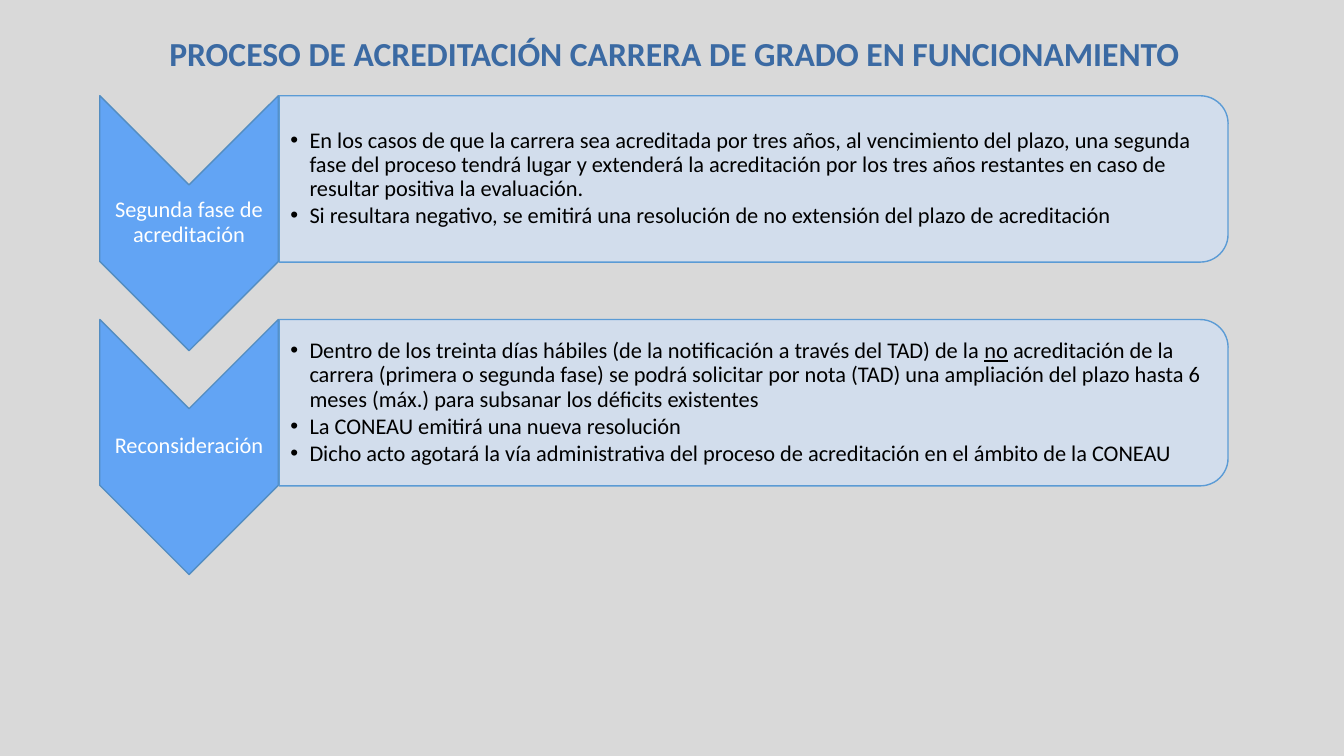
from dataclasses import dataclass

from lxml import etree
from pptx import Presentation
from pptx.dml.color import RGBColor
from pptx.enum.shapes import MSO_SHAPE
from pptx.enum.text import MSO_ANCHOR, MSO_AUTO_SIZE, PP_ALIGN
from pptx.oxml.ns import qn
from pptx.util import Inches, Pt

CHEVRON = MSO_SHAPE.CHEVRON
PANEL = MSO_SHAPE.ROUND_2_SAME_RECTANGLE
MIDDLE, BOTTOM = MSO_ANCHOR.MIDDLE, MSO_ANCHOR.BOTTOM
CENTER, LEFT = PP_ALIGN.CENTER, PP_ALIGN.LEFT
NO_FIT = MSO_AUTO_SIZE.NONE

COLORS = {
    "back": "D9D9D9",
    "title": "3B6AA3",
    "arrow": "62A4F4",
    "edge": "538DC1",
    "panel": "D2DEEF",
    "rim": "5B9BD5",
    "white": "FFFFFF",
    "black": "000000",
}
FONT = "Calibri"
FIRST_TOP = 0.95
PITCH = 2.22
INDENT = 0.19


@dataclass
class Box:
    left: float
    top: float
    width: float
    height: float

    def place(self) -> tuple:
        return tuple(Inches(v) for v in (self.left, self.top, self.width, self.height))


@dataclass
class Step:
    label: str
    points: list[list[str]]


STEPS = [
    Step("Segunda fase de acreditación", [
        ["En los casos de que la carrera sea acreditada por tres años, al vencimiento "
         "del plazo, una segunda fase del proceso tendrá lugar y extenderá la "
         "acreditación por los tres años restantes en caso de resultar positiva la "
         "evaluación."],
        ["Si resultara negativo, se emitirá una resolución de no extensión del plazo "
         "de acreditación"],
    ]),
    Step("Reconsideración", [
        ["Dentro de los treinta días hábiles (de la notificación a través del TAD) de la ",
         "no",
         " acreditación de la carrera (primera o segunda fase) se podrá solicitar por "
         "nota (TAD) una ampliación del plazo hasta 6 meses (máx.) para subsanar los "
         "déficits existentes"],
        ["La CONEAU emitirá una nueva resolución"],
        ["Dicho acto agotará la vía administrativa del proceso de acreditación en el "
         "ámbito de la CONEAU"],
    ]),
]


def rgb(name: str) -> RGBColor:
    return RGBColor.from_string(COLORS[name])


def add_bullet(para) -> None:
    props = para._p.get_or_add_pPr()
    props.set("marL", str(Inches(INDENT)))
    props.set("indent", str(-Inches(INDENT)))
    etree.SubElement(props, qn("a:buFont")).set("typeface", "Arial")
    etree.SubElement(props, qn("a:buChar")).set("char", "•")


def write(shape, paras: list[list[str]], *, color: str, size: int = 16,
          bold: bool = False, align=LEFT, anchor=MIDDLE, spacing=0.9,
          before: int = 0, after: int = 0, bullet: bool = False,
          inset: float = 0.01, indent: float = 0.01) -> None:
    frame = shape.text_frame
    frame.word_wrap = True
    frame.auto_size = NO_FIT
    frame.vertical_anchor = anchor
    frame.margin_left = Inches(indent)
    frame.margin_top = frame.margin_right = frame.margin_bottom = Inches(inset)
    for i, parts in enumerate(paras):
        para = frame.add_paragraph() if i else frame.paragraphs[0]
        para.alignment = align
        para.line_spacing = spacing
        para.space_before, para.space_after = Pt(before), Pt(after)
        if bullet:
            add_bullet(para)
        for j, part in enumerate(parts):
            run = para.add_run()
            run.text = part
            font = run.font
            font.name, font.size, font.bold = FONT, Pt(size), bold
            font.color.rgb = rgb(color)
            if j % 2:
                font.underline = True


def add_turned(slide, kind, box: Box, fill: str, line: str, alpha: int = 100) -> None:
    mid_x, mid_y = box.left + box.width / 2, box.top + box.height / 2
    turned = Box(mid_x - box.height / 2, mid_y - box.width / 2, box.height, box.width)
    shape = slide.shapes.add_shape(kind, *turned.place())
    shape.rotation = 90
    shape.shadow.inherit = False
    shape.fill.solid()
    shape.fill.fore_color.rgb = rgb(fill)
    shape.line.color.rgb = rgb(line)
    shape.line.width = Pt(1)
    if alpha < 100:
        tint = shape._element.spPr.find(qn("a:solidFill"))[0]
        etree.SubElement(tint, qn("a:alpha")).set("val", str(alpha * 1000))


def add_step(slide, step: Step, top: float) -> None:
    add_turned(slide, CHEVRON, Box(0.99, top, 1.77, 2.53), "arrow", "edge")
    label = slide.shapes.add_textbox(*Box(0.99, top + 0.88, 1.77, 0.76).place())
    write(label, [[step.label]], color="white", align=CENTER)
    add_turned(slide, PANEL, Box(2.77, top, 9.41, 1.65), "panel", "rim", 90)
    body = slide.shapes.add_textbox(*Box(2.76, top + 0.08, 9.33, 1.49).place())
    write(body, step.points, color="black", after=2, bullet=True, indent=0.12)


def main() -> None:
    deck = Presentation()
    deck.slide_width, deck.slide_height = Inches(13.33), Inches(7.5)
    slide = deck.slides.add_slide(deck.slide_layouts[5])
    slide.background.fill.solid()
    slide.background.fill.fore_color.rgb = rgb("back")

    title = slide.shapes.title
    title.left, title.top, title.width, title.height = Box(1.16, 0.09, 11.01, 0.69).place()
    write(title, [["PROCESO DE ACREDITACIÓN CARRERA DE GRADO EN FUNCIONAMIENTO"]],
          color="title", size=24, bold=True, align=CENTER, anchor=BOTTOM,
          spacing=Pt(38.4), before=12, after=12, inset=0.05, indent=0.1)

    for i, step in enumerate(STEPS):
        add_step(slide, step, FIRST_TOP + i * PITCH)
    deck.save("out.pptx")


if __name__ == "__main__":
    main()
